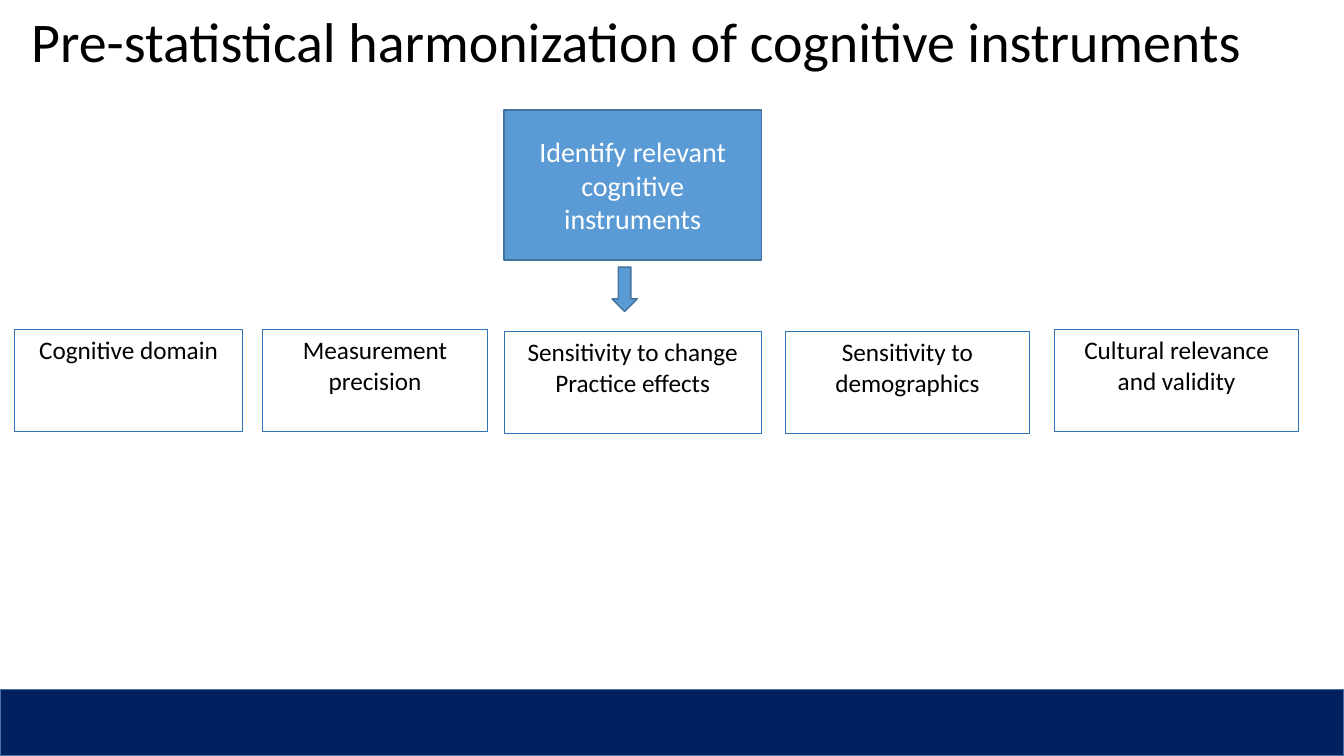
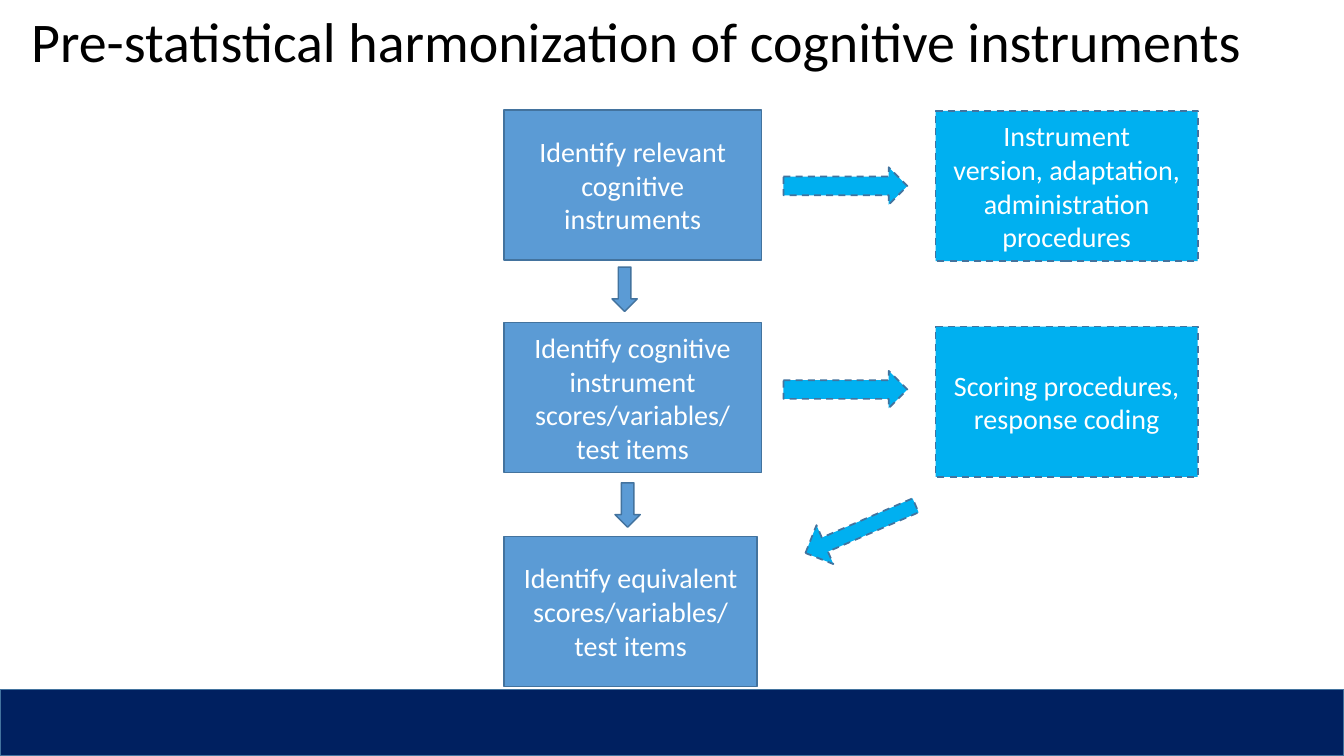
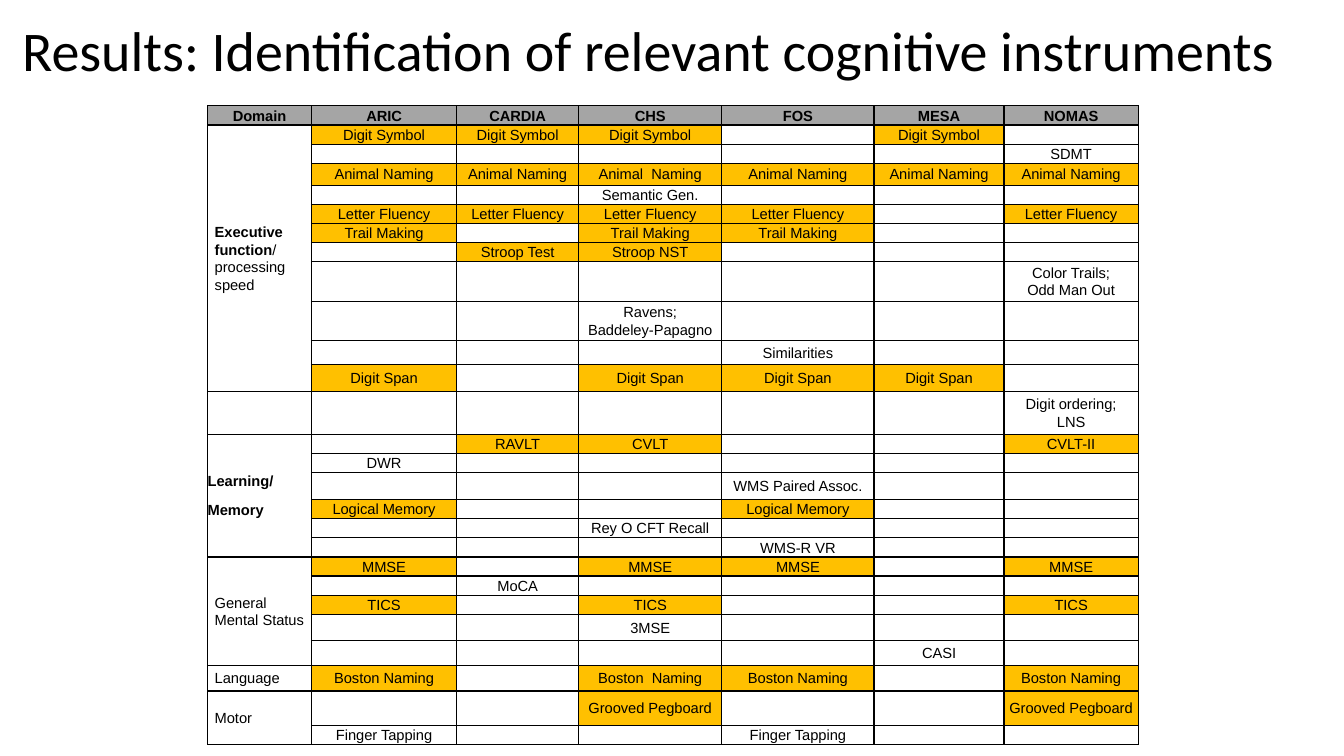
from dataclasses import dataclass

from lxml import etree
from pptx import Presentation
from pptx.dml.color import RGBColor
from pptx.enum import dml, shapes, text
from pptx.oxml import ns
from pptx.util import Inches, Pt


@dataclass(frozen=True)
class Theme:
    font: str = "Calibri"
    table_font: str = "Arial"
    black: str = "000000"
    white: str = "FFFFFF"
    step: str = "5B9BD5"
    detail: str = "00B0F0"
    outline: str = "43739E"
    criterion_outline: str = "2E75B6"
    band: str = "002060"
    header: str = "A5A5A5"
    shared: str = "FFC000"
    title_size: float = 40
    box_size: float = 20
    criterion_size: float = 18
    table_size: float = 10.5


THEME = Theme()
SLIDE_WIDTH, SLIDE_HEIGHT = 13.33, 7.5
BAND_TOP = 6.84
BOX_HEIGHT = 1.49
CRITERION_HEIGHT = 1.01

FLOW_TITLE = "Pre-statistical harmonization of cognitive instruments"
RESULTS_TITLE = "Results: Identification of relevant cognitive instruments"

# Paragraphs, left, top, width
STEPS = [
    (["Identify relevant cognitive instruments"], 5, 1.09, 2.55),
    (["Identify cognitive instrument", "scores/variables/", "test items"], 5, 3.2, 2.55),
    (["Identify equivalent scores/variables/", "test items"], 5, 5.32, 2.51),
]
DETAILS = [
    (["Instrument", "version, adaptation, administration procedures"], 9.28, 1.1, 2.6),
    (["Scoring procedures, response coding"], 9.28, 3.24, 2.6),
]
CRITERIA = [
    (["Cognitive domain"], 0.14, 3.27, 2.27),
    (["Measurement precision"], 2.6, 3.27, 2.24),
    (["Sensitivity to change", "Practice effects"], 5, 3.29, 2.55),
    (["Sensitivity to demographics"], 7.79, 3.29, 2.42),
    (["Cultural relevance and validity"], 10.46, 3.27, 2.42),
]
DOWN_ARROWS = [(6.07, 2.65, 0.25, 0.44), (6.1, 4.79, 0.25, 0.44)]
RIGHT_ARROWS = [(7.77, top, 1.23, 0.37) for top in (1.66, 3.68)]
RETURN_ARROW = (7.94, 5.04, 1.19, 0.42)

STUDIES = ["ARIC", "CARDIA", "CHS", "FOS", "MESA", "NOMAS"]
COLUMN_WIDTHS = [1.03, 1.44, 1.21, 1.42, 1.51, 1.29, 1.33]
HEADER_HEIGHT = 0.19

# Paragraphs of (text, bold) runs, left margin, number of test rows
DOMAINS = [
    ([[("Executive function", True), ("/ processing speed", False)]], 0.07, 11),
    ([], 0, 1),
    ([[("Learning/", True)], [("Memory", True)]], 0, 6),
    ([[("General Mental Status", False)]], 0.07, 5),
    ([[("Language", False)]], 0.07, 1),
    ([[("Motor", False)]], 0.07, 2),
]
# Row height, highlighted, tests and the studies that used them
TESTS = [
    (0.19, True, {"Digit Symbol": "ARIC CARDIA CHS MESA"}),
    (0.19, False, {"SDMT": "NOMAS"}),
    (0.22, True, {"Animal Naming": "ARIC CARDIA FOS MESA NOMAS", "Animal  Naming": "CHS"}),
    (0.19, False, {"Semantic Gen.": "CHS"}),
    (0.19, True, {"Letter Fluency": "ARIC CARDIA CHS FOS NOMAS"}),
    (0.19, True, {"Trail Making": "ARIC CHS FOS"}),
    (0.19, True, {"Stroop Test": "CARDIA", "Stroop NST": "CHS"}),
    (0.39, False, {"Color Trails;\nOdd Man Out": "NOMAS"}),
    (0.39, False, {"Ravens;\nBaddeley-Papagno": "CHS"}),
    (0.24, False, {"Similarities": "FOS"}),
    (0.27, True, {"Digit Span": "ARIC CHS FOS MESA"}),
    (0.42, False, {"Digit ordering;\nLNS": "NOMAS"}),
    (0.19, True, {"RAVLT": "CARDIA", "CVLT": "CHS", "CVLT-II": "NOMAS"}),
    (0.19, False, {"DWR": "ARIC"}),
    (0.27, False, {"WMS Paired Assoc.": "FOS"}),
    (0.19, True, {"Logical Memory": "ARIC FOS"}),
    (0.19, False, {"Rey O CFT Recall": "CHS"}),
    (0.19, False, {"WMS-R VR": "FOS"}),
    (0.19, True, {"MMSE": "ARIC CHS FOS NOMAS"}),
    (0.19, False, {"MoCA": "CARDIA"}),
    (0.19, True, {"TICS": "ARIC CHS NOMAS"}),
    (0.26, False, {"3MSE": "CHS"}),
    (0.25, False, {"CASI": "MESA"}),
    (0.25, True, {"Boston Naming": "ARIC FOS NOMAS", "Boston  Naming": "CHS"}),
    (0.34, True, {"Grooved Pegboard": "CHS NOMAS"}),
    (0.19, False, {"Finger Tapping": "ARIC FOS"}),
]


def add_span(para, words, size, color, font=THEME.font, bold=False):
    span = para.add_run()
    span.text = words
    span.font.name = font
    span.font.size = Pt(size)
    span.font.bold = bold
    span.font.color.rgb = RGBColor.from_string(color)


def paragraphs(frame, count):
    """Yield the paragraphs of an empty frame, adding those that are missing."""
    for index in range(count):
        yield frame.add_paragraph() if index else frame.paragraphs[0]


def add_titled_slide(deck, title, left, top, width):
    page = deck.slides.add_slide(deck.slide_layouts[5])
    box = page.shapes.title
    box.left, box.top, box.width, box.height = map(Inches, (left, top, width, 1.45))
    frame = box.text_frame
    frame.word_wrap = True
    frame.auto_size = text.MSO_AUTO_SIZE.NONE
    frame.vertical_anchor = text.MSO_ANCHOR.MIDDLE
    para = frame.paragraphs[0]
    para.alignment = text.PP_ALIGN.LEFT
    para.line_spacing = 0.9
    add_span(para, title, THEME.title_size, THEME.black)
    return page


def add_block(page, kind, place, fill, outline=THEME.outline, weight=1, dashed=False):
    block = page.shapes.add_shape(kind, *map(Inches, place))
    block.shadow.inherit = False
    if fill:
        block.fill.solid()
        block.fill.fore_color.rgb = RGBColor.from_string(fill)
    else:
        block.fill.background()
    block.line.color.rgb = RGBColor.from_string(outline)
    block.line.width = Pt(weight)
    if dashed:
        block.line.dash_style = dml.MSO_LINE.DASH
    return block


def add_box(page, item, height, size, color, anchor, **look):
    lines, left, top, width = item
    box = add_block(page, shapes.MSO_SHAPE.RECTANGLE, (left, top, width, height), **look)
    frame = box.text_frame
    frame.word_wrap = True
    frame.vertical_anchor = anchor
    for para, line in zip(paragraphs(frame, len(lines)), lines):
        para.alignment = text.PP_ALIGN.CENTER
        add_span(para, line, size, color)


def add_flow_slide(deck, step_count):
    """Add a slide with the band and the first steps, joined by down arrows."""
    page = add_titled_slide(deck, FLOW_TITLE, 0.21, -0.28, 12.53)
    for step in STEPS[:step_count]:
        add_box(page, step, BOX_HEIGHT, THEME.box_size, THEME.white,
                text.MSO_ANCHOR.MIDDLE, fill=THEME.step)
    for place in DOWN_ARROWS[:step_count]:
        add_block(page, shapes.MSO_SHAPE.DOWN_ARROW, place, THEME.step)
    band = (0, BAND_TOP, SLIDE_WIDTH, SLIDE_HEIGHT - BAND_TOP)
    add_block(page, shapes.MSO_SHAPE.RECTANGLE, band, THEME.band)
    return page


def add_criteria_slide(deck):
    page = add_flow_slide(deck, 1)
    for criterion in CRITERIA:
        add_box(page, criterion, CRITERION_HEIGHT, THEME.criterion_size, THEME.black,
                text.MSO_ANCHOR.TOP, fill=None,
                outline=THEME.criterion_outline, weight=0.75)


def add_procedure_slide(deck):
    page = add_flow_slide(deck, len(STEPS))
    look = dict(fill=THEME.detail, weight=1.25, dashed=True)
    for detail in DETAILS:
        add_box(page, detail, BOX_HEIGHT, THEME.box_size, THEME.white,
                text.MSO_ANCHOR.MIDDLE, **look)
    for place in RIGHT_ARROWS:
        add_block(page, shapes.MSO_SHAPE.RIGHT_ARROW, place, **look)
    back = add_block(page, shapes.MSO_SHAPE.LEFT_ARROW, RETURN_ARROW, **look)
    back.adjustments[0] = 0.36
    back.rotation = -23.4


def style_cell(cell, fill):
    properties = cell._tc.get_or_add_tcPr()
    for side in ("a:lnL", "a:lnR", "a:lnT", "a:lnB"):
        border = etree.SubElement(properties, ns.qn(side), w=str(Pt(1)))
        solid = etree.SubElement(border, ns.qn("a:solidFill"))
        etree.SubElement(solid, ns.qn("a:srgbClr"), val=THEME.black)
    cell.fill.solid()
    cell.fill.fore_color.rgb = RGBColor.from_string(fill)
    cell.margin_left = cell.margin_right = cell.margin_top = cell.margin_bottom = 0
    cell.vertical_anchor = text.MSO_ANCHOR.MIDDLE
    end = etree.SubElement(cell.text_frame.paragraphs[0]._p, ns.qn("a:endParaRPr"))
    end.set("sz", str(int(THEME.table_size * 100)))


def fill_cell(cell, lines, alignment=text.PP_ALIGN.CENTER, gap=0):
    """Write paragraphs of (text, bold) runs, with a gap in points between them."""
    for index, para in enumerate(paragraphs(cell.text_frame, len(lines))):
        para.alignment = alignment
        para.line_spacing = 1.07
        para.space_after = Pt(gap if index < len(lines) - 1 else 0)
        for words, bold in lines[index]:
            add_span(para, words, THEME.table_size, THEME.black, THEME.table_font, bold)


def add_results_slide(deck):
    page = add_titled_slide(deck, RESULTS_TITLE, 0.12, -0.2, 13.1)
    heights = [HEADER_HEIGHT] + [height for height, _, _ in TESTS]
    place = (2.06, 1.05, sum(COLUMN_WIDTHS), sum(heights))
    table = page.shapes.add_table(
        len(heights), len(COLUMN_WIDTHS), *map(Inches, place)).table
    table.first_row = table.horz_banding = False
    for column, width in zip(table.columns, COLUMN_WIDTHS):
        column.width = Inches(width)
    for row, height in zip(table.rows, heights):
        row.height = Inches(height)

    for column, name in enumerate(["Domain"] + STUDIES):
        style_cell(table.cell(0, column), THEME.header)
        fill_cell(table.cell(0, column), [[(name, True)]])

    for row, (_, highlighted, tests) in enumerate(TESTS, 1):
        used = {study: test for test, names in tests.items() for study in names.split()}
        style_cell(table.cell(row, 0), THEME.white)
        for column, study in enumerate(STUDIES, 1):
            cell = table.cell(row, column)
            marked = highlighted and study in used
            style_cell(cell, THEME.shared if marked else THEME.white)
            if study in used:
                fill_cell(cell, [[(line, False)] for line in used[study].split("\n")])

    row = 1
    for lines, margin, count in DOMAINS:
        cell = table.cell(row, 0)
        if count > 1:
            cell.merge(table.cell(row + count - 1, 0))
        cell.margin_left = Inches(margin)
        fill_cell(cell, lines, text.PP_ALIGN.LEFT, gap=8)
        row += count


def main():
    deck = Presentation()
    deck.slide_width, deck.slide_height = Inches(SLIDE_WIDTH), Inches(SLIDE_HEIGHT)
    add_criteria_slide(deck)
    add_procedure_slide(deck)
    add_results_slide(deck)
    deck.save("out.pptx")


if __name__ == "__main__":
    main()
